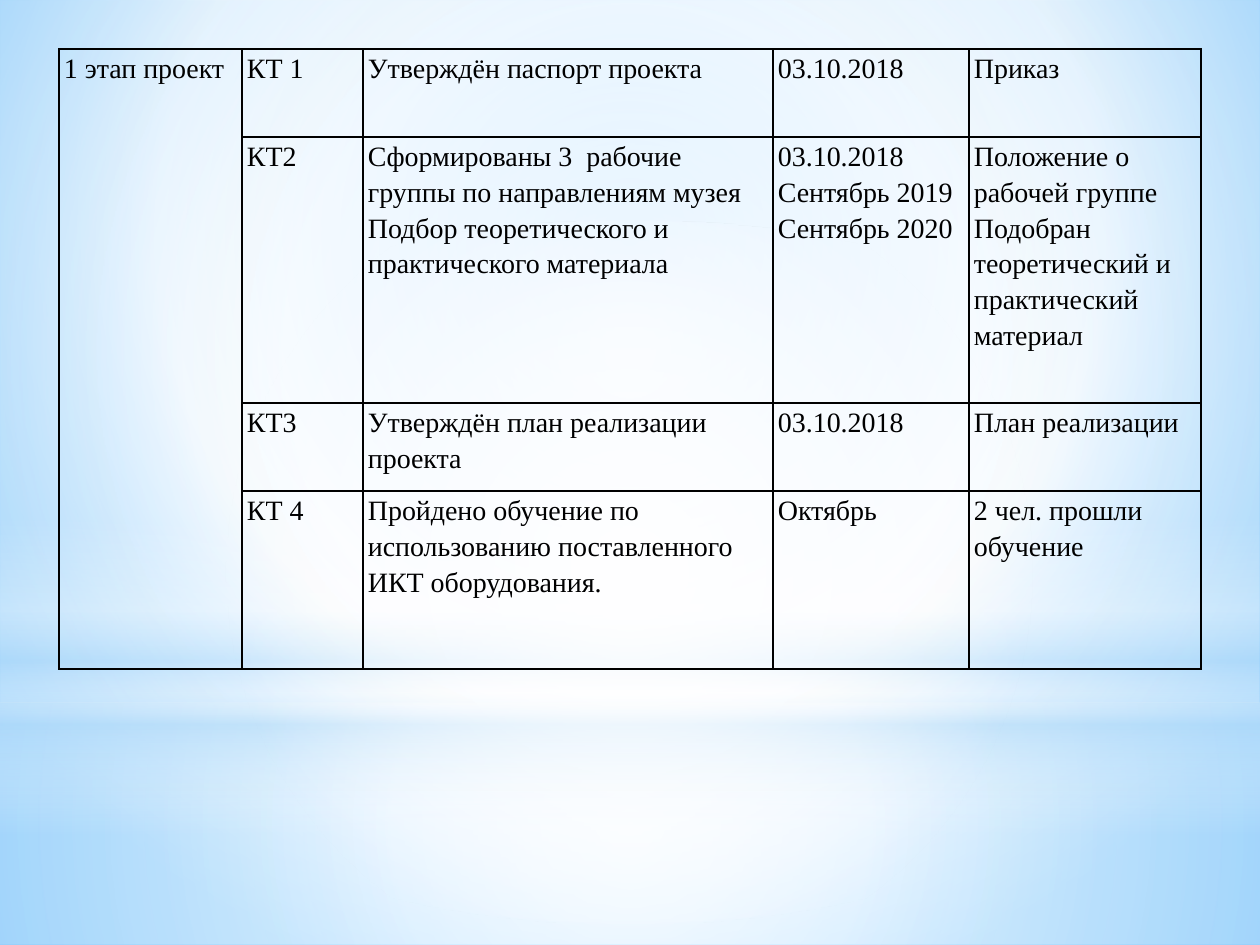
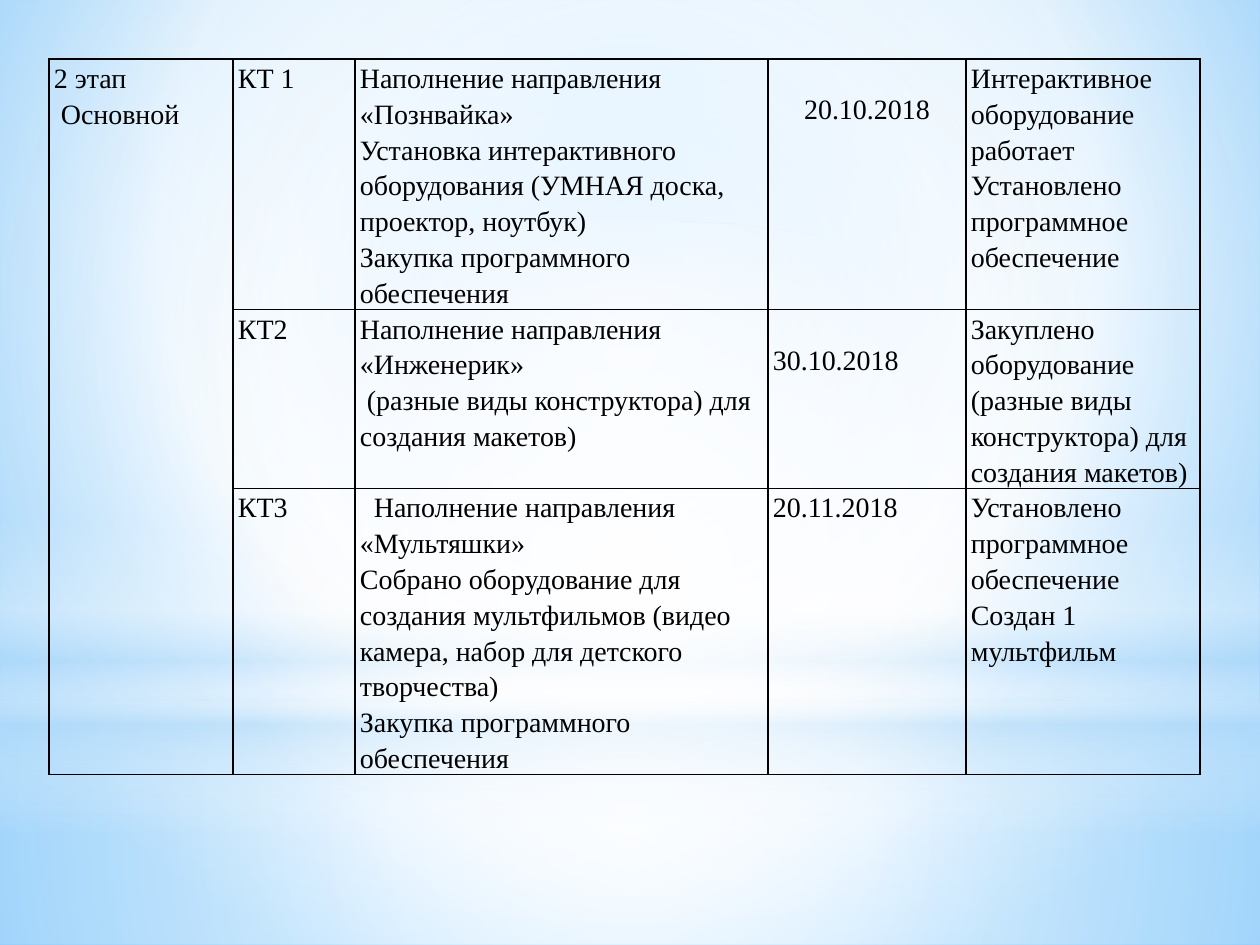
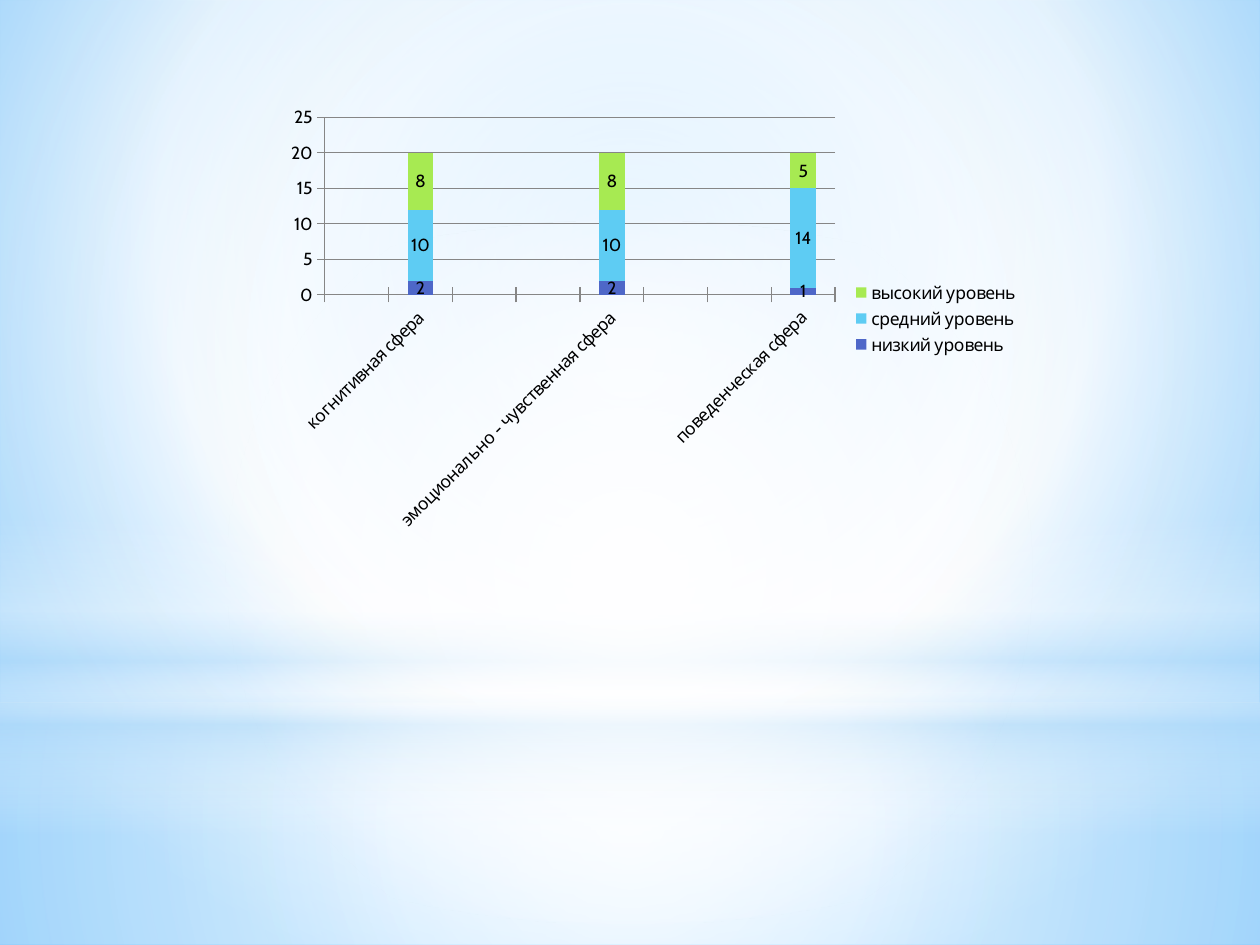
from lxml import etree
from pptx import Presentation
from pptx.chart.data import CategoryChartData
from pptx.dml.color import RGBColor
from pptx.enum.chart import XL_CHART_TYPE as ChartType, XL_LEGEND_POSITION as LegendPosition
from pptx.enum.chart import XL_TICK_MARK as TickMark
from pptx.enum.shapes import MSO_SHAPE as Preset
from pptx.enum.text import PP_ALIGN as Align
from pptx.oxml.ns import qn
from pptx.util import Emu, Pt

# Shared scale, colours and fonts
PX_PER_INCH = 126
BLACK, WHITE, GRAY = "000000", "FFFFFF", "868686"
SKY, AZURE, PALE = "9ED5FF", "5BB9FF", "B4DCFA"
TABLE_FONT, CHART_FONT = "Times New Roman", "Cabin"
CENTER_FOCUS = (50, 50, 50, 50)

# Backdrop bands: preset, box in px, stops (position, colour, opacity), gradient form
BANDS = [
    (Preset.RECTANGLE, (0, 703, 1260, 242),
     [(0, WHITE, 91), (37, WHITE, 76), (100, PALE, 79)], {"focus": CENTER_FOCUS}),
    (Preset.RECTANGLE, (0, 0, 1260, 703),
     [(0, WHITE, 89), (48, WHITE, 62), (100, PALE, 79)], {"focus": CENTER_FOCUS}),
    (Preset.RECTANGLE, (0, 519, 1260, 315),
     [(0, WHITE, 0), (29, WHITE, 30), (45, PALE, 40), (55, WHITE, 26),
      (65, PALE, 60), (100, WHITE, 0)], {"angle": 90}),
    (Preset.OVAL, (0, 221, 1260, 703),
     [(0, WHITE, 100), (56, WHITE, 0)], {"focus": CENTER_FOCUS}),
]

# Table contents: a cell is a list of paragraphs, a paragraph is text or (text, format);
# a number before the paragraphs is the top inset in px
PROJECT_ROWS = [
    [["1 этап проект"], ["КТ 1"], ["Утверждён паспорт проекта"], ["03.10.2018"], ["Приказ"]],
    [[], ["КТ2"],
     ["Сформированы 3  рабочие группы по направлениям музея Подбор теоретического "
      "и практического материала"],
     ["03.10.2018", "Сентябрь 2019", "Сентябрь 2020"],
     ["Положение о рабочей группе", "Подобран теоретический и практический материал"]],
    [[], ["КТ3"], ["Утверждён план реализации проекта"], ["03.10.2018"], ["План реализации"]],
    [[], ["КТ 4"], ["Пройдено обучение по использованию поставленного ИКТ оборудования."],
     ["Октябрь"], ["2 чел. прошли обучение"]],
]
MAIN_ROWS = [
    [["2 этап", " Основной"], ["КТ 1"],
     ["Наполнение направления «Познвайка»",
      "Установка интерактивного оборудования (УМНАЯ доска, проектор, ноутбук)",
      "Закупка программного обеспечения"],
     [31, ("20.10.2018", {"align": Align.CENTER})],
     ["Интерактивное оборудование работает", "Установлено программное обеспечение"]],
    [[], ["КТ2"],
     ["Наполнение направления «Инженерик»",
      " (разные виды конструктора) для создания макетов)"],
     [31, "30.10.2018"],
     ["Закуплено оборудование (разные виды конструктора) для создания макетов)"]],
    [[], ["КТ3"],
     [("Наполнение направления «Мультяшки»", {"indent": 14}),
      "Собрано оборудование для создания мультфильмов (видео камера, набор для "
      "детского творчества)",
      "Закупка программного обеспечения"],
     ["20.11.2018"],
     ["Установлено программное обеспечение", "Создан 1 мультфильм"]],
]

# Chart contents
SPHERES = ["когнитивная сфера", "эмоционально - чувственная сфера", "поведенческая сфера"]
LEVELS = [("низкий уровень", "4E67C8", [2, 2, 1]),
          ("средний уровень", "5ECCF3", [10, 10, 14]),
          ("высокий уровень", "A7EA52", [8, 8, 5])]


def px(length):
    return Emu(round(length * 914400 / PX_PER_INCH))


def color(hex_code):
    return RGBColor.from_string(hex_code)


def add_gradient(properties, stops, focus=None, angle=0):
    """Swap the solid fill of a properties element for a gradient."""
    gradient = etree.Element(qn("a:gradFill"), rotWithShape="1")
    stop_list = etree.SubElement(gradient, qn("a:gsLst"))
    for position, hex_code, opacity in stops:
        stop = etree.SubElement(stop_list, qn("a:gs"), pos=str(position * 1000))
        tint = etree.SubElement(stop, qn("a:srgbClr"), val=hex_code)
        if opacity < 100:
            etree.SubElement(tint, qn("a:alpha"), val=str(opacity * 1000))
    if focus:
        form = etree.SubElement(gradient, qn("a:path"), path="circle")
        sides = {side: str(share * 1000) for side, share in zip("ltrb", focus)}
        etree.SubElement(form, qn("a:fillToRect"), **sides)
    else:
        etree.SubElement(gradient, qn("a:lin"), ang=str(angle * 60000), scaled="0")
    properties.replace(properties.find(qn("a:solidFill")), gradient)


def add_backdrop(deck, page):
    """Give the master its background and bands, which every page inherits."""
    master = deck.slide_master
    master.background.fill.solid()
    master.background.fill.fore_color.rgb = color(WHITE)
    add_gradient(master.element.find(".//" + qn("p:bgPr")),
                 [(0, SKY, 100), (60, WHITE, 100), (100, AZURE, 100)],
                 focus=(20, 10, 20, 60))
    for index, (preset, box, stops, form) in enumerate(BANDS):
        band = page.shapes.add_shape(preset, *map(px, box))
        band.shadow.inherit = False
        band.line.fill.background()
        band.fill.solid()
        band.fill.fore_color.rgb = color(WHITE)
        add_gradient(band.element.spPr, stops, **form)
        band.element.find(".//" + qn("p:cNvPr")).set("id", str(100 + index))
        master.shapes.element.insert(2 + index, band.element)


def write_para(para, text, align=Align.LEFT, indent=0):
    para.alignment = align
    para.line_spacing = 1.15
    if indent:
        para._p.get_or_add_pPr().set("indent", str(px(indent)))
    span = para.add_run()
    span.text = text
    span.font.name = TABLE_FONT
    span.font.size = Pt(16)
    span.font.color.rgb = color(BLACK)


def add_borders(cell):
    properties = cell._tc.get_or_add_tcPr()
    for index, side in enumerate(("lnL", "lnR", "lnT", "lnB")):
        border = etree.Element(qn("a:" + side), w=str(Pt(1)))
        fill = etree.SubElement(border, qn("a:solidFill"))
        etree.SubElement(fill, qn("a:srgbClr"), val=BLACK)
        properties.insert(index, border)


def fill_cell(cell, content):
    top = 0
    if content and isinstance(content[0], int):
        top, *content = content
    cell.margin_left = cell.margin_right = px(5)
    cell.margin_top, cell.margin_bottom = px(top), 0
    cell.fill.background()
    add_borders(cell)
    frame = cell.text_frame
    for index, item in enumerate(content):
        text, style = (item, {}) if isinstance(item, str) else item
        write_para(frame.add_paragraph() if index else frame.paragraphs[0], text, **style)


def add_stage_table(page, left, top, widths, heights, rows):
    """Draw a stage table whose first column is one merged cell."""
    table = page.shapes.add_table(len(heights), len(widths), px(left), px(top),
                                  px(sum(widths)), px(sum(heights))).table
    table.first_row = table.horz_banding = False
    for column, width in zip(table.columns, widths):
        column.width = px(width)
    for row, height, contents in zip(table.rows, heights, rows):
        row.height = px(height)
        for cell, content in zip(row.cells, contents):
            fill_cell(cell, content)
    table.cell(0, 0).merge(table.cell(len(heights) - 1, 0))


def spread(values, blank):
    """Place each value in every third slot, starting from the second."""
    slots = [blank] * (3 * len(values) - 1)
    slots[1::3] = values
    return slots


def style_axis(axis):
    axis.format.line.color.rgb = color(GRAY)
    axis.major_tick_mark = TickMark.CROSS
    axis.minor_tick_mark = TickMark.NONE


def add_level_chart(page, left, top, width, height):
    data = CategoryChartData()
    data.categories = spread(SPHERES, "")
    for name, _, values in LEVELS:
        data.add_series(name, spread(values, None))
    chart = page.shapes.add_chart(ChartType.COLUMN_STACKED, px(left), px(top),
                                  px(width), px(height), data).chart
    chart.has_title = False
    chart.font.name = CHART_FONT
    chart.font.size = Pt(10)
    chart.font.color.rgb = color(BLACK)
    chart.has_legend = True
    chart.legend.position = LegendPosition.RIGHT
    chart.legend.include_in_layout = False

    plot = chart.plots[0]
    plot.vary_by_categories = False
    plot.overlap, plot.gap_width = 100, 150
    for series, (_, hex_code, _) in zip(plot.series, LEVELS):
        series.format.fill.solid()
        series.format.fill.fore_color.rgb = color(hex_code)
        series.data_labels.show_value = True

    style_axis(chart.category_axis)
    style_axis(chart.value_axis)
    chart.value_axis.has_major_gridlines = True
    chart.value_axis.major_gridlines.format.line.color.rgb = color(GRAY)


def main():
    deck = Presentation()
    deck.slide_width, deck.slide_height = px(1260), px(945)
    blank = deck.slide_layouts[6]
    project_page, main_page, chart_page = [deck.slides.add_slide(blank) for _ in range(3)]
    add_backdrop(deck, project_page)

    # Stage tables
    add_stage_table(project_page, 59, 49, [183, 121, 410, 196, 232],
                    [88, 266, 88, 178], PROJECT_ROWS)
    add_stage_table(main_page, 49, 59, [184, 122, 413, 198, 234],
                    [180, 136, 180], MAIN_ROWS)

    # Levels by sphere
    add_level_chart(chart_page, 276, 98, 756, 441)
    deck.save("out.pptx")


if __name__ == "__main__":
    main()
